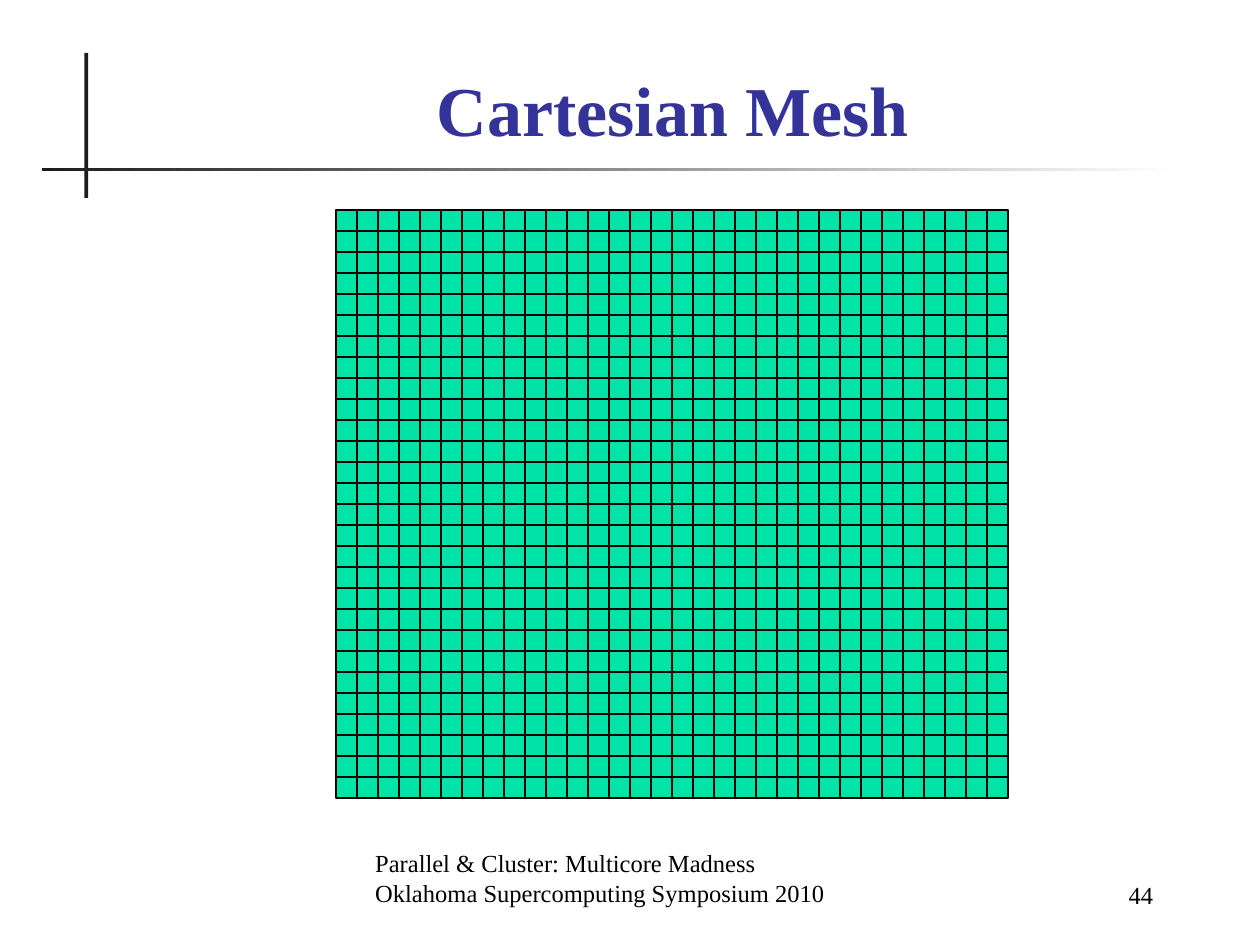
from lxml import etree
from pptx import Presentation
from pptx.dml.color import RGBColor
from pptx.enum import shapes, text
from pptx.oxml.ns import qn
from pptx.util import Inches, Pt

# Content
TITLE = ["Cartesian Mesh"]
FOOTER = ["Parallel & Cluster: Multicore Madness",
          "Oklahoma Supercomputing Symposium 2010"]
PAGE = ["44"]
COLORS = {"title": "333399", "text": "000000", "rule": "1C1C1C",
          "fade": "FFFFFF", "mesh": "00E4A8", "grid": "000000"}
FONT = "Times New Roman"

# Mesh geometry: square cells, six to the inch
CELL = 1 / 6
COLUMNS, ROWS = 32, 28
LEFT, TOP = 16 * CELL, 10 * CELL
RIGHT, BOTTOM = LEFT + COLUMNS * CELL, TOP + ROWS * CELL


def color(name):
    return RGBColor.from_string(COLORS[name])


def add_rect(parent, left, top, width, height, fill):
    rect = parent.add_shape(shapes.MSO_SHAPE.RECTANGLE, Inches(left), Inches(top),
                            Inches(width), Inches(height))
    rect.shadow.inherit = False
    rect.fill.solid()
    rect.fill.fore_color.rgb = color(fill)
    rect.line.fill.background()
    return rect


def add_grid_line(parent, x1, y1, x2, y2):
    line = parent.add_connector(shapes.MSO_CONNECTOR.STRAIGHT, Inches(x1), Inches(y1),
                                Inches(x2), Inches(y2))
    line.line.color.rgb = color("grid")
    line.line.width = Pt(0.75)
    etree.SubElement(line._element.spPr, qn("a:effectLst"))


def add_text(parent, box, lines, size, fill, align, bold=False):
    frame = parent.add_textbox(*(Inches(n) for n in box)).text_frame
    frame.word_wrap = True
    frame.vertical_anchor = text.MSO_ANCHOR.BOTTOM
    frame.text = "\n".join(lines)
    for paragraph in frame.paragraphs:
        paragraph.alignment = align
        paragraph.font.name = FONT
        paragraph.font.size = Pt(size)
        paragraph.font.bold = bold
        paragraph.font.color.rgb = color(fill)


prs = Presentation()
prs.slide_width, prs.slide_height = Inches(10), Inches(7.5)
slide = prs.slides.add_slide(prs.slide_layouts[6])

# Crossed rules beside and below the title
add_rect(slide.shapes, 0.67, 0.42, 0.03, 1.15, "rule")
fading_rule = add_rect(slide.shapes, 0.33, 1.33, 9, 0.03, "rule")
fading_rule.fill.gradient()
fading_rule.fill.gradient_angle = 0
for stop, name, position in zip(fading_rule.fill.gradient_stops, ("rule", "fade"), (0, 1)):
    stop.color.rgb = color(name)
    stop.position = position

# Footer and page number
add_text(slide.shapes, (2.88, 6.75, 4.37, 0.5), FOOTER, 14, "text", text.PP_ALIGN.LEFT)
add_text(slide.shapes, (7.83, 6.77, 1.42, 0.5), PAGE, 14, "text", text.PP_ALIGN.RIGHT)

# Mesh
mesh = slide.shapes.add_group_shape().shapes
area = add_rect(mesh, LEFT, TOP, RIGHT - LEFT, BOTTOM - TOP, "mesh")
area.line.color.rgb = color("grid")
area.line.width = Pt(0.75)
for column in range(1, COLUMNS):
    x = LEFT + column * CELL
    add_grid_line(mesh, x, TOP, x, BOTTOM)
for row in range(1, ROWS):
    y = TOP + row * CELL
    add_grid_line(mesh, LEFT, y, RIGHT, y)

# Title
add_text(slide.shapes, (1.08, 0.5, 8.52, 0.74), TITLE, 40, "title",
         text.PP_ALIGN.CENTER, bold=True)

prs.save("out.pptx")
